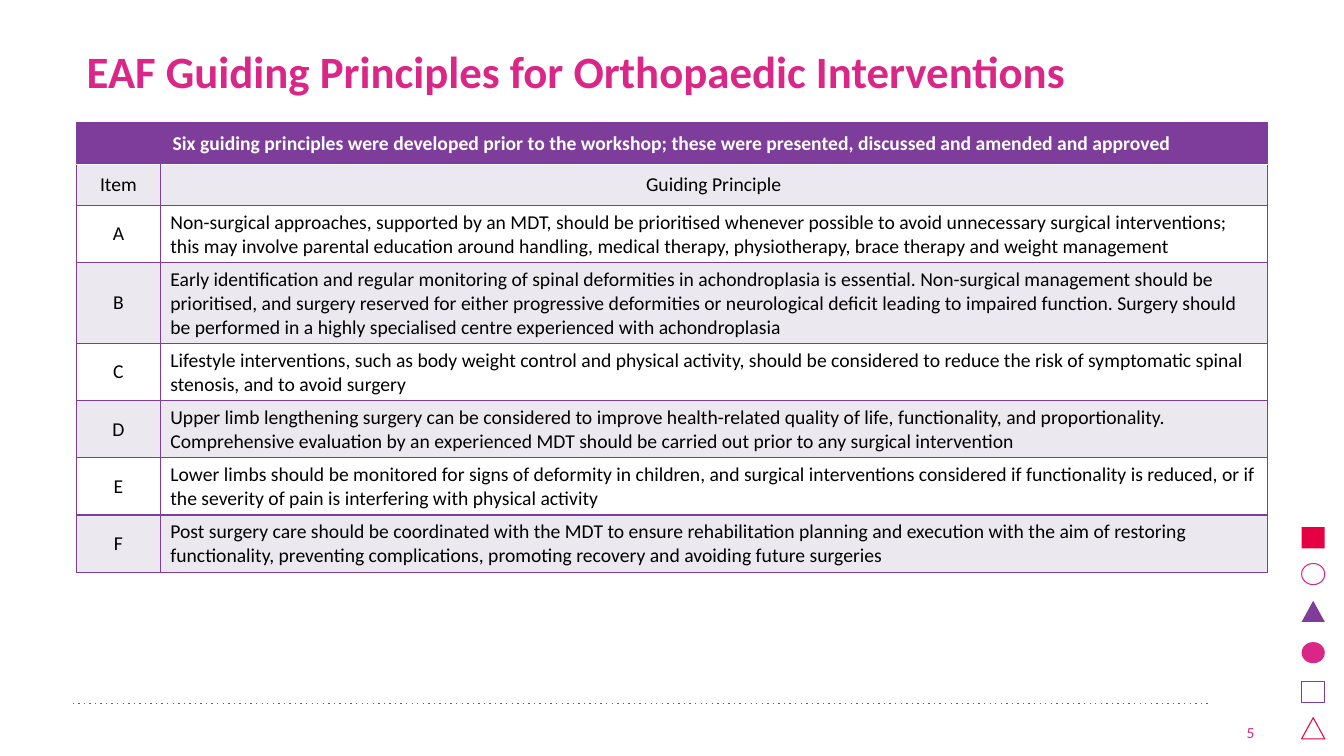
from lxml.etree import SubElement
from pptx import Presentation
from pptx.dml.color import RGBColor
from pptx.enum.dml import MSO_LINE
from pptx.enum.shapes import MSO_CONNECTOR, MSO_SHAPE as SHAPE
from pptx.enum.text import MSO_ANCHOR as ANCHOR, PP_ALIGN as ALIGN
from pptx.oxml import parse_xml
from pptx.oxml.ns import nsdecls, qn
from pptx.util import Inches, Pt

COLOURS = {
    "pink": "DA2686",
    "purple": "7E3C9B",
    "red": "E50043",
    "band": "ECE8EF",
    "white": "FFFFFF",
    "black": "000000",
    "grey": "646464",
}
FONT = "Calibri"
TITLE = "EAF Guiding Principles for Orthopaedic Interventions"
SUMMARY = (
    "Six guiding principles were developed prior to the workshop; "
    "these were presented, discussed and amended and approved"
)
PRINCIPLES = [
    "Non-surgical approaches, supported by an MDT, should be prioritised whenever possible to avoid "
    "unnecessary surgical interventions; this may involve parental education around handling, "
    "medical therapy, physiotherapy, brace therapy and weight management",
    "Early identification and regular monitoring of spinal deformities in achondroplasia is essential. "
    "Non-surgical management should be prioritised, and surgery reserved for either progressive "
    "deformities or neurological deficit leading to impaired function. Surgery should be performed "
    "in a highly specialised centre experienced with achondroplasia",
    "Lifestyle interventions, such as body weight control and physical activity, should be considered "
    "to reduce the risk of symptomatic spinal stenosis, and to avoid surgery",
    "Upper limb lengthening surgery can be considered to improve health-related quality of life, "
    "functionality, and proportionality. Comprehensive evaluation by an experienced MDT should be "
    "carried out prior to any surgical intervention",
    "Lower limbs should be monitored for signs of deformity in children, and surgical interventions "
    "considered if functionality is reduced, or if the severity of pain is interfering with "
    "physical activity",
    "Post surgery care should be coordinated with the MDT to ensure rehabilitation planning and "
    "execution with the aim of restoring functionality, preventing complications, promoting recovery "
    "and avoiding future surgeries",
]
MARKERS = [
    (SHAPE.RECTANGLE, "red", True, 0),
    (SHAPE.OVAL, "pink", False, 0.36),
    (SHAPE.ISOSCELES_TRIANGLE, "purple", True, 0.73),
    (SHAPE.OVAL, "pink", True, 1.14),
    (SHAPE.RECTANGLE, "purple", False, 1.53),
    (SHAPE.ISOSCELES_TRIANGLE, "red", False, 1.89),
]


def rgb(colour):
    return RGBColor.from_string(COLOURS[colour])


def write(frame, text, size, colour, bold=False, align=ALIGN.LEFT):
    frame.text = text
    paragraph = frame.paragraphs[0]
    paragraph.alignment = align
    font = paragraph.runs[0].font
    font.name, font.size, font.bold = FONT, Pt(size), bold
    font.color.rgb = rgb(colour)


def add_title(slide, left, top, width, height):
    title = slide.shapes.title
    title.left, title.top = Inches(left), Inches(top)
    title.width, title.height = Inches(width), Inches(height)
    write(title.text_frame, TITLE, 32, "pink", bold=True)
    title.text_frame.vertical_anchor = ANCHOR.MIDDLE
    title.text_frame.paragraphs[0].line_spacing = 0.9


def set_borders(cell, **sides):
    properties = cell._tc.get_or_add_tcPr()
    for position, side in enumerate("LRTB"):
        border = parse_xml(f'<a:ln{side} {nsdecls("a")} w="12700"/>')
        fill = SubElement(border, qn("a:solidFill"))
        SubElement(fill, qn("a:srgbClr"), val=COLOURS[sides.get(side, "purple")])
        properties.insert(position, border)


def fill_cell(cell, text, fill, colour="black", bold=False, align=ALIGN.CENTER, **sides):
    write(cell.text_frame, text, 14, colour, bold, align)
    cell.vertical_anchor = ANCHOR.MIDDLE
    cell.fill.solid()
    cell.fill.fore_color.rgb = rgb(fill)
    set_borders(cell, **sides)


def add_principles(slide, left, top, width, row_height):
    item_width = 0.83
    row_count = len(PRINCIPLES) + 2
    table = slide.shapes.add_table(
        row_count, 2, Inches(left), Inches(top), Inches(width), Inches(row_height * row_count)
    ).table
    table.horz_banding = False
    table.columns[0].width = Inches(item_width)
    table.columns[1].width = Inches(width - item_width)

    table.cell(0, 0).merge(table.cell(0, 1))
    fill_cell(table.cell(0, 0), SUMMARY, "purple", "white", bold=True, B="white")
    set_borders(table.cell(0, 1), B="white")
    for column, heading in enumerate(("Item", "Guiding Principle")):
        fill_cell(table.cell(1, column), heading, "band", T="white")

    for row, (item, principle) in enumerate(zip("ABCDEF", PRINCIPLES), start=2):
        fill = "band" if row % 2 else "white"
        fill_cell(table.cell(row, 0), item, fill)
        fill_cell(table.cell(row, 1), principle, fill, align=ALIGN.LEFT)


def add_markers(slide, left, top, width, height):
    for kind, colour, filled, offset in MARKERS:
        marker = slide.shapes.add_shape(
            kind, Inches(left), Inches(top + offset), Inches(width), Inches(height)
        )
        marker.shadow.inherit = False
        if filled:
            marker.fill.solid()
            marker.fill.fore_color.rgb = rgb(colour)
            marker.line.fill.background()
        else:
            marker.fill.background()
            marker.line.color.rgb = rgb(colour)
            marker.line.width = Pt(0.75)


def add_footer(slide, left, top, width, height):
    number_width, number_drop = 0.58, 0.03
    rule = slide.shapes.add_connector(
        MSO_CONNECTOR.STRAIGHT, Inches(left), Inches(top), Inches(left + width), Inches(top)
    )
    rule.line.color.rgb = rgb("grey")
    rule.line.width = Pt(1)
    rule.line.dash_style = MSO_LINE.ROUND_DOT
    properties = rule._element.spPr
    properties.find(".//" + qn("a:prstDash")).set("val", "dot")
    SubElement(properties, qn("a:effectLst"))

    number = slide.shapes.add_textbox(
        Inches(left + width - 0.03), Inches(top + number_drop), Inches(number_width), Inches(height)
    ).text_frame
    number.word_wrap = True
    number.vertical_anchor = ANCHOR.BOTTOM
    write(number, "5", 11, "pink", align=ALIGN.RIGHT)


def main():
    deck = Presentation()
    deck.slide_width, deck.slide_height = Inches(13.33), Inches(7.5)
    slide = deck.slides.add_slide(deck.slide_layouts[5])
    add_markers(slide, 12.91, 5.23, 0.23, 0.21)
    add_footer(slide, 0.72, 6.98, 11.27, 0.4)
    add_title(slide, 0.76, 0.17, 11.81, 1.12)
    add_principles(slide, 0.76, 1.22, 11.81, 0.41)
    deck.save("out.pptx")


if __name__ == "__main__":
    main()
